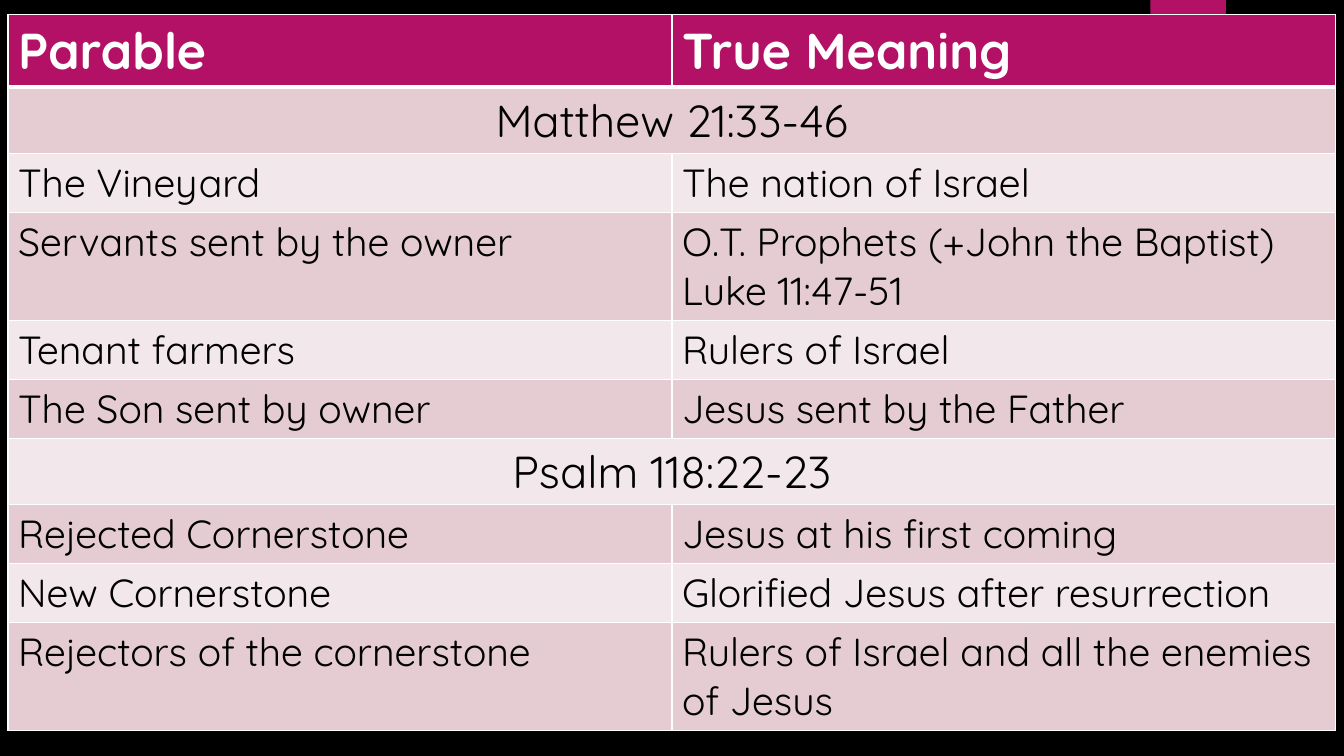
from lxml.etree import SubElement
from pptx import Presentation
from pptx.dml.color import RGBColor
from pptx.enum.shapes import MSO_SHAPE
from pptx.enum.text import PP_ALIGN
from pptx.oxml.ns import qn
from pptx.util import Inches, Pt

FONT, MAGENTA, WHITE, BLACK = "Quicksand", "B31166", "FFFFFF", "000000"
BANDS = ["F2E7EA", "E5CCD3"]
# One entry spans the row as a section heading; two entries fill both columns.
ROWS = [
    ["Parable", "True Meaning"],
    ["Matthew 21:33-46"],
    ["The Vineyard", "The nation of Israel"],
    ["Servants sent by the owner", "O.T. Prophets (+John the Baptist)\nLuke 11:47-51"],
    ["Tenant farmers", "Rulers of Israel"],
    ["The Son sent by owner", "Jesus sent by the Father"],
    ["Psalm 118:22-23"],
    ["Rejected Cornerstone", "Jesus at his first coming"],
    ["New Cornerstone", "Glorified Jesus after resurrection"],
    ["Rejectors of the cornerstone", "Rulers of Israel and all the enemies of Jesus"],
]
TWO_LINE_ROWS = (3, 9)
COL_W = 6.585


def paint(fill, color):
    fill.solid()
    fill.fore_color.rgb = RGBColor.from_string(color)


def add_border(cell, side, width):
    ln = SubElement(cell._tc.get_or_add_tcPr(), qn(f"a:ln{side}"), w=str(Pt(width)))
    SubElement(SubElement(ln, qn("a:solidFill")), qn("a:srgbClr"), val=WHITE)


prs = Presentation()
prs.slide_width, prs.slide_height = Inches(13.33), Inches(7.5)
s = prs.slides.add_slide(prs.slide_layouts[6])
paint(s.background.fill, BLACK)

tab = s.shapes.add_shape(MSO_SHAPE.RECTANGLE, Inches(11.41), 0, Inches(0.75), Inches(1.25))
tab.shadow.inherit = False
paint(tab.fill, MAGENTA)
tab.line.fill.background()

heights = []
for i, texts in enumerate(ROWS):
    if i == 0:
        heights.append(0.72)
    elif len(texts) == 1:
        heights.append(0.65)
    else:
        heights.append(1.07 if i in TWO_LINE_ROWS else 0.585)

table = s.shapes.add_table(len(ROWS), 2, Inches(0.08), Inches(0.14),
                           Inches(2 * COL_W), Inches(sum(heights))).table
table.horz_banding = False
for col in table.columns:
    col.width = Inches(COL_W)

for i, (texts, height) in enumerate(zip(ROWS, heights)):
    table.rows[i].height = Inches(height)
    header, section = i == 0, len(texts) == 1
    for j in range(2):
        cell = table.cell(i, j)
        for side in "LRTB":
            under_header = (i, side) in [(0, "B"), (1, "T")]
            add_border(cell, side, 3 if under_header else 1)
        paint(cell.fill, MAGENTA if header else BANDS[i % 2])
    if section:
        table.cell(i, 0).merge(table.cell(i, 1))
    for j, text in enumerate(texts):
        tf = table.cell(i, j).text_frame
        tf.text = text
        for p in tf.paragraphs:
            if section:
                p.alignment = PP_ALIGN.CENTER
            p.font.name = FONT
            p.font.size = Pt(36 if header else 32 if section else 28)
            p.font.bold = header
            p.font.color.rgb = RGBColor.from_string(WHITE if header else BLACK)

prs.save("out.pptx")
